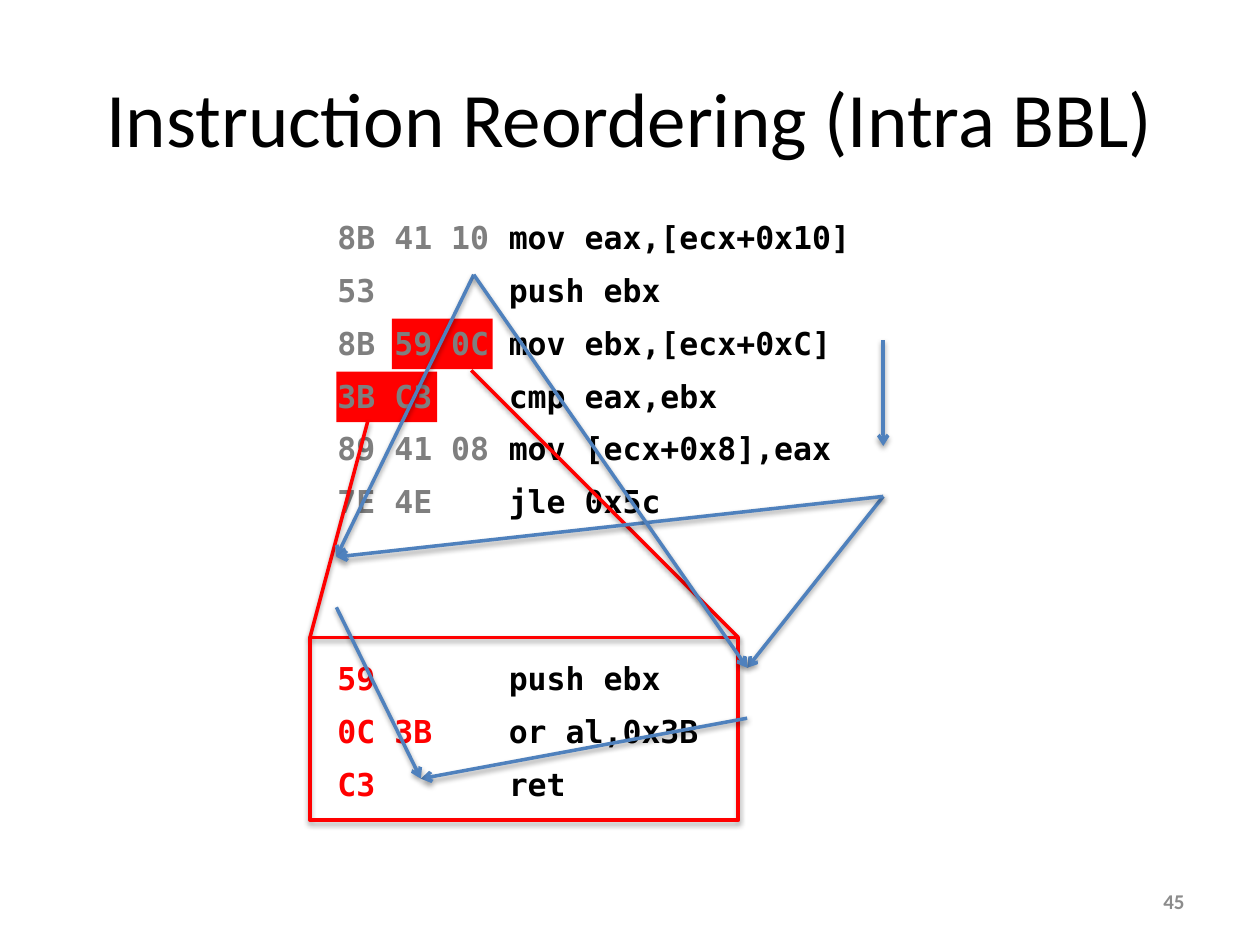
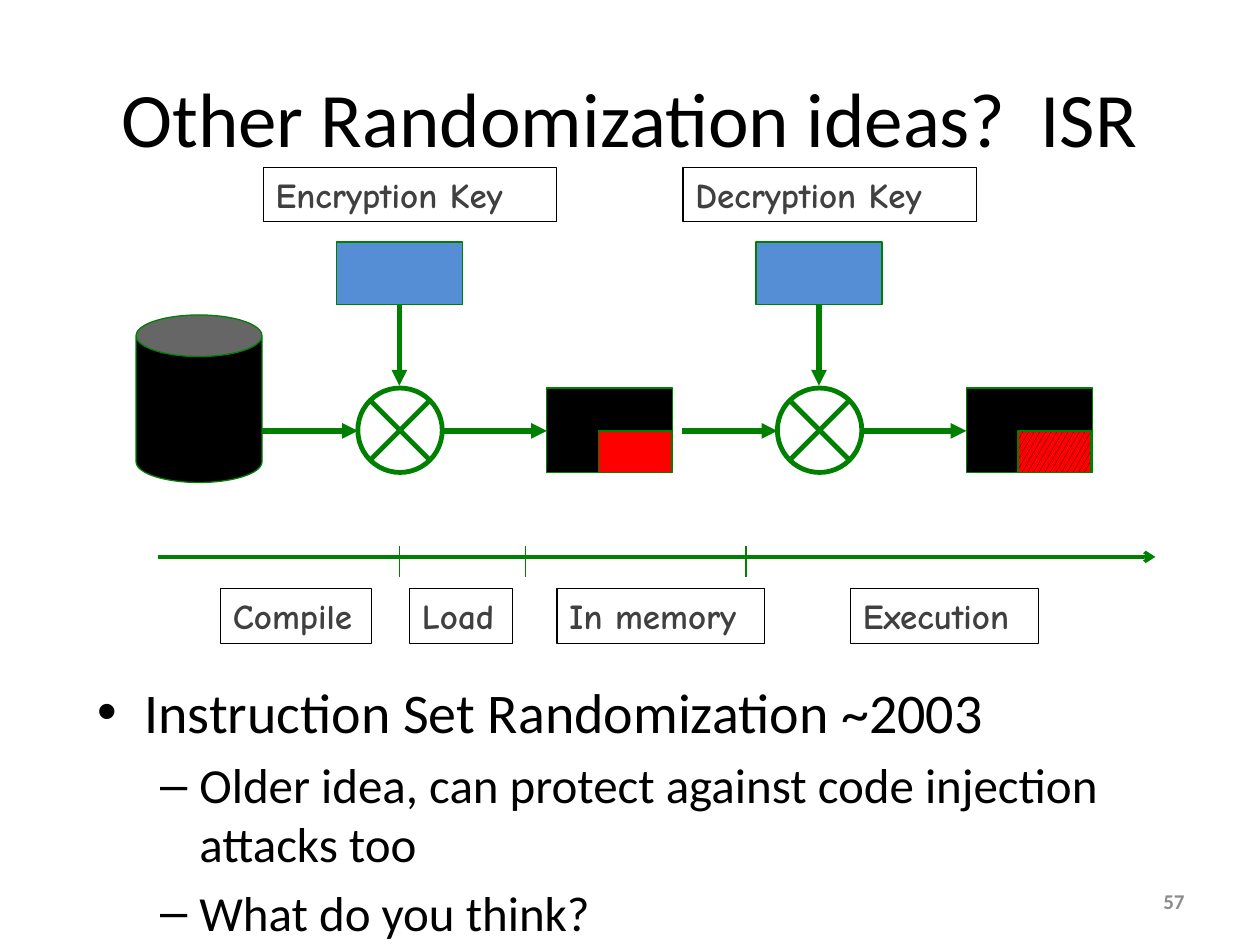
from lxml import etree
from pptx import Presentation
from pptx import util as u
from pptx.dml.color import RGBColor
from pptx.enum import dml, shapes, text
from pptx.oxml import ns

BLACK = RGBColor(0x00, 0x00, 0x00)
INK = RGBColor(0x40, 0x40, 0x40)
GRAY = RGBColor(0x7F, 0x7F, 0x7F)
PALE = RGBColor(0x8C, 0x8C, 0x8C)
RED = RGBColor(0xFF, 0x00, 0x00)
BLUE = RGBColor(0x4F, 0x81, 0xBD)
SKY = RGBColor(0x55, 0x8E, 0xD5)
GREEN = RGBColor(0x00, 0x80, 0x00)

SANS = "Calibri"
MONO = "DejaVu Sans Mono"
COMIC = "Comic Neue"
FORM = shapes.MSO_SHAPE
ROW = 0.42
LINE = 0.4
PAD = 0.1
TAB = 1.36


def inch(*sizes):
    return [u.Inches(size) for size in sizes]


def sub(node, tag, **attrs):
    child = etree.SubElement(node, ns.qn(tag))
    for key, value in attrs.items():
        child.set(key, str(value))
    return child


def write(para, words, font=SANS, size=18, color=BLACK, bold=False):
    run = para.add_run()
    run.text = words
    run.font.name = font
    run.font.size = u.Pt(size)
    run.font.bold = bold
    run.font.color.rgb = color


def textbox(slide, box, anchor=text.MSO_ANCHOR.TOP):
    item = slide.shapes.add_textbox(*inch(*box))
    frame = item.text_frame
    frame.word_wrap = True
    frame.vertical_anchor = anchor
    return item, frame.paragraphs[0]


def shade(item, blur=3.1, gap=1.6, alpha=38):
    effects = sub(item._element.spPr, "a:effectLst")
    if blur:
        cast = sub(effects, "a:outerShdw", blurRad=u.Pt(blur), dist=u.Pt(gap),
                   dir=90 * 60000, rotWithShape=0)
        color = sub(cast, "a:srgbClr", val=BLACK)
        sub(color, "a:alpha", val=alpha * 1000)


def form(slide, kind, box, fill=None, line=None, width=0.75):
    item = slide.shapes.add_shape(kind, *inch(*box))
    item.shadow.inherit = False
    if fill is None:
        item.fill.background()
    else:
        item.fill.solid()
        item.fill.fore_color.rgb = fill
    if line is None:
        item.line.fill.background()
    else:
        item.line.color.rgb = line
        item.line.width = u.Pt(width)
    return item


def link(slide, start, end, color, width=2, head=None, blur=0):
    item = slide.shapes.add_connector(
        shapes.MSO_CONNECTOR.STRAIGHT, *inch(*start, *end))
    item.line.color.rgb = color
    item.line.width = u.Pt(width)
    if head:
        sub(item.line._get_or_add_ln(), "a:tailEnd", type=head)
    shade(item, blur)


def base(deck, layout, title, page):
    slide = deck.slides.add_slide(deck.slide_layouts[layout])
    write(slide.shapes.title.text_frame.paragraphs[0], title, size=44)
    _, para = textbox(slide, (7.17, 6.95, 2.33, 0.4), text.MSO_ANCHOR.MIDDLE)
    para.alignment = text.PP_ALIGN.RIGHT
    write(para, page, size=12, color=PALE, bold=True)
    return slide


def code(slide, left, top, rows, color):
    for i, (bytes_, order) in enumerate(rows):
        _, para = textbox(slide, (left, top + i * ROW, 4.34, LINE))
        stops = sub(para._p.get_or_add_pPr(), "a:tabLst")
        sub(stops, "a:tab", pos=u.Inches(TAB), algn="l")
        write(para, bytes_ + "\t", font=MONO, color=color, bold=True)
        write(para, order, font=MONO, bold=True)


def zoom(slide, left, top, width, height):
    rows = [("59", "push ebx"), ("0C 3B", "or al,0x3B"), ("C3", "ret")]
    code(slide, left + 0.12, top + 0.12, rows, RED)
    link(slide, (left + 0.46, top - 1.72), (left, top), RED, blur=3.1)
    link(slide, (left + 1.28, top - 2.12), (left + width, top), RED, blur=3.1)
    frame = form(slide, FORM.RECTANGLE, (left, top, width, height),
                 line=RED, width=2)
    frame._element.spPr.remove(frame._element.spPr.find(ns.qn("a:effectLst")))
    shade(frame, gap=1.8, alpha=35)


def graph(slide, left, top):
    spots = {
        "root": (1.09, 0), "side": (4.34, 0.52), "stop": (4.34, 1.36),
        "fork": (4.34, 1.76), "west": (0, 2.24), "down": (0, 2.64),
        "east": (3.26, 3.12), "low": (3.26, 3.52), "end": (0.67, 4),
    }
    at = {key: (left + x, top + y) for key, (x, y) in spots.items()}
    paths = [("root", "west"), ("side", "stop"), ("fork", "east"),
             ("low", "end"), ("down", "end"), ("fork", "west"),
             ("root", "east")]
    for start, end in paths:
        link(slide, at[start], at[end], BLUE, head="arrow", blur=3.1)


def reorder(deck):
    slide = base(deck, 5, "Instruction Reordering (Intra BBL)", "45")
    left, top = 2.58, 1.68
    rows = [
        ("8B 41 10", "mov eax,[ecx+0x10]"),
        ("53", "push ebx"),
        ("8B 59 0C", "mov ebx,[ecx+0xC]"),
        ("3B C3", "cmp eax,ebx"),
        ("89 41 08", "mov [ecx+0x8],eax"),
        ("7E 4E", "jle 0x5c"),
    ]
    for x, row in ((0.53, 2), (0.09, 3)):
        form(slide, FORM.RECTANGLE,
             (left + x, top + 0.01 + row * ROW, 0.8, LINE), RED)
    code(slide, left, top, rows, GRAY)
    zoom(slide, 2.46, 5.06, 3.4, 1.45)
    graph(slide, 2.67, 2.18)


def label(slide, words, box):
    item, para = textbox(slide, box)
    item.line.color.rgb = BLACK
    item.line.width = u.Pt(0.75)
    write(para, words, font=COMIC, size=20, color=INK, bold=True)


def stage(slide, left, top, words, hatch):
    label(slide, words, (left - 0.58, top, 2.33, 0.43))
    form(slide, FORM.RECTANGLE, (left, top + 0.59, 1, 0.5), SKY, GREEN)
    form(slide, FORM.FLOWCHART_SUMMING_JUNCTION,
         (left + 0.17, top + 1.75, 0.67, 0.67), None, GREEN, 2.75)
    form(slide, FORM.FLOWCHART_PROCESS,
         (left + 1.67, top + 1.75, 1, 0.67), BLACK, GREEN)
    patch = form(slide, FORM.RECTANGLE,
                 (left + 2.08, top + 2.09, 0.58, 0.33), RED, GREEN)
    if hatch:
        patch.fill.patterned()
        patch.fill.pattern = dml.MSO_PATTERN.LARGE_CONFETTI
        patch.fill.fore_color.rgb = BLACK
        patch.fill.back_color.rgb = RED
    mid = top + 2.09
    for start, end in (
        ((left - 0.59, mid), (left + 0.17, mid)),
        ((left + 0.83, mid), (left + 1.67, mid)),
        ((left + 0.5, top + 1.09), (left + 0.5, top + 1.73)),
    ):
        link(slide, start, end, GREEN, 3, "triangle")


def timeline(slide, left, top, width):
    link(slide, (left, top), (left + width, top), GREEN, 2, "arrow")
    for x in (1.92, 2.92, 4.67):
        link(slide, (left + x, top - 0.09), (left + x, top + 0.16),
             GREEN, 0.75)
    for words, x, wide in (("Compile", 0.5, 1.2), ("Load", 2, 0.82),
                           ("In memory", 3.17, 1.65),
                           ("Execution", 5.5, 1.49)):
        label(slide, words, (left + x, top + 0.25, wide, 0.44))


def bullets(slide, box, rows):
    body = slide.placeholders[1]
    body.left, body.top, body.width, body.height = inch(*box)
    frame = body.text_frame
    frame.auto_size = text.MSO_AUTO_SIZE.NONE
    for i, (level, words) in enumerate(rows):
        para = frame.add_paragraph() if i else frame.paragraphs[0]
        para.level = level
        write(para, words, size=28 if level else 32)


def ideas(deck):
    slide = base(deck, 1, "Other Randomization ideas?  ISR", "57")
    bullets(slide, (0.67, 5.33, 9, 2.2), [
        (0, "Instruction Set Randomization ~2003"),
        (1, "Older idea, can protect against code injection attacks too"),
        (1, "What do you think?"),
    ])
    disk = form(slide, FORM.CAN, (1.08, 2.5, 1, 1.33), BLACK, GREEN)
    disk.adjustments[0] = 0.33
    stage(slide, 2.67, 1.33, "Encryption Key", False)
    stage(slide, 6, 1.33, "Decryption Key", True)
    timeline(slide, 1.25, 4.42, 7.92)


def main():
    deck = Presentation()
    deck.slide_width, deck.slide_height = inch(10, 7.5)
    reorder(deck)
    ideas(deck)
    deck.save("out.pptx")


if __name__ == "__main__":
    main()
